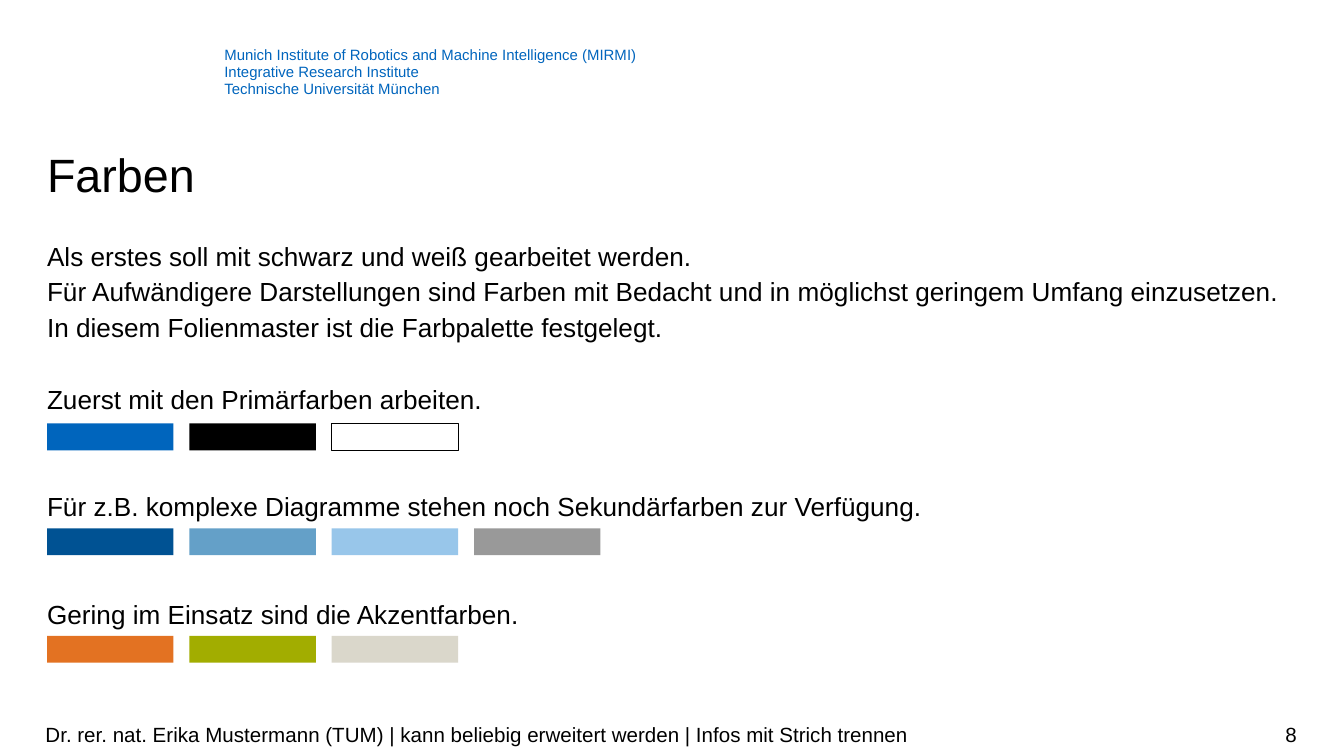
from pptx import Presentation
from pptx.dml.color import RGBColor
from pptx.enum.shapes import MSO_SHAPE
from pptx.enum.text import MSO_ANCHOR as Anchor, PP_ALIGN as Align
from pptx.util import Cm, Pt

COLORS = {
    "blue": "0065BD", "black": "000000", "white": "FFFFFF",
    "dark_blue": "005293", "mid_blue": "64A0C8", "light_blue": "98C6EA",
    "gray": "999999",
    "orange": "E37222", "green": "A2AD00", "beige": "DAD7CB",
}
LEFT = 0.89
CONTENT_WIDTH = 23.65
BODY_LINE = 19.2


def rgb(name):
    return RGBColor.from_string(COLORS[name])


class SlideBuilder:
    font_name = "Arial"
    swatch_size = (2.39, 0.51)
    swatch_pitch = 2.69

    def __init__(self, slide):
        self.slide = slide

    def text(self, box, paragraphs, size, color="black", spacing=None,
             gaps=(), align=Align.LEFT, anchor=Anchor.TOP):
        """Add a text box; gaps holds the space before each later paragraph."""
        frame = self.slide.shapes.add_textbox(*map(Cm, box)).text_frame
        frame.word_wrap = True
        frame.vertical_anchor = anchor
        frame.margin_left = frame.margin_right = 0
        frame.margin_top = frame.margin_bottom = 0
        frame.text = "\n".join(paragraphs)
        for paragraph in frame.paragraphs:
            paragraph.alignment = align
            paragraph.line_spacing = spacing
            for run in paragraph.runs:
                run.font.name = self.font_name
                run.font.size = Pt(size)
                run.font.color.rgb = rgb(color)
        for paragraph, gap in zip(frame.paragraphs[1:], gaps):
            paragraph.space_before = Pt(gap)

    def swatch(self, left, top, color):
        shape = self.slide.shapes.add_shape(
            MSO_SHAPE.RECTANGLE, Cm(left), Cm(top), *map(Cm, self.swatch_size))
        shape.shadow.inherit = False
        shape.fill.solid()
        shape.fill.fore_color.rgb = rgb(color)
        if color == "white":
            shape.line.color.rgb = rgb("black")
            shape.line.width = Pt(0.5)
        else:
            shape.line.fill.background()

    def swatch_row(self, top, colors):
        for column, color in enumerate(colors):
            self.swatch(LEFT + column * self.swatch_pitch, top, color)


def main():
    deck = Presentation()
    deck.slide_width, deck.slide_height = Cm(25.4), Cm(14.28)
    builder = SlideBuilder(deck.slides.add_slide(deck.slide_layouts[6]))

    builder.text((4.24, 0.89, 8.1, 0.97), [
        "Munich Institute of Robotics and Machine Intelligence (MIRMI)",
        "Integrative Research Institute",
        "Technische Universität München",
    ], 8, color="blue", spacing=Pt(9))

    builder.text((LEFT, 2.69, CONTENT_WIDTH, 1.14), ["Farben"], 25,
                 spacing=Pt(32))

    introduction = "\v".join([
        "Als erstes soll mit schwarz und weiß gearbeitet werden.",
        "Für Aufwändigere Darstellungen sind Farben mit Bedacht und in "
        "möglichst geringem Umfang einzusetzen.",
        "In diesem Folienmaster ist die Farbpalette festgelegt.",
    ])
    builder.text((LEFT, 4.45, CONTENT_WIDTH, 8.61), [
        introduction,
        "Zuerst mit den Primärfarben arbeiten.",
        "Für z.B. komplexe Diagramme stehen noch Sekundärfarben zur Verfügung.",
        "Gering im Einsatz sind die Akzentfarben.",
    ], 14, spacing=1.14, gaps=(BODY_LINE, 2 * BODY_LINE, 2 * BODY_LINE))

    palettes = {
        8.0: ("blue", "black", "white"),
        9.98: ("dark_blue", "mid_blue", "light_blue", "gray"),
        12.01: ("orange", "green", "beige"),
    }
    for top, colors in palettes.items():
        builder.swatch_row(top, colors)

    builder.text((0.86, 13.49, 17.96, 0.76), [
        "Dr. rer. nat. Erika Mustermann (TUM) | kann beliebig erweitert werden"
        " | Infos mit Strich trennen",
    ], 11, anchor=Anchor.MIDDLE)
    builder.text((18.82, 13.49, 5.69, 0.76), ["8"], 11,
                 align=Align.RIGHT, anchor=Anchor.MIDDLE)

    deck.save("out.pptx")


if __name__ == "__main__":
    main()
